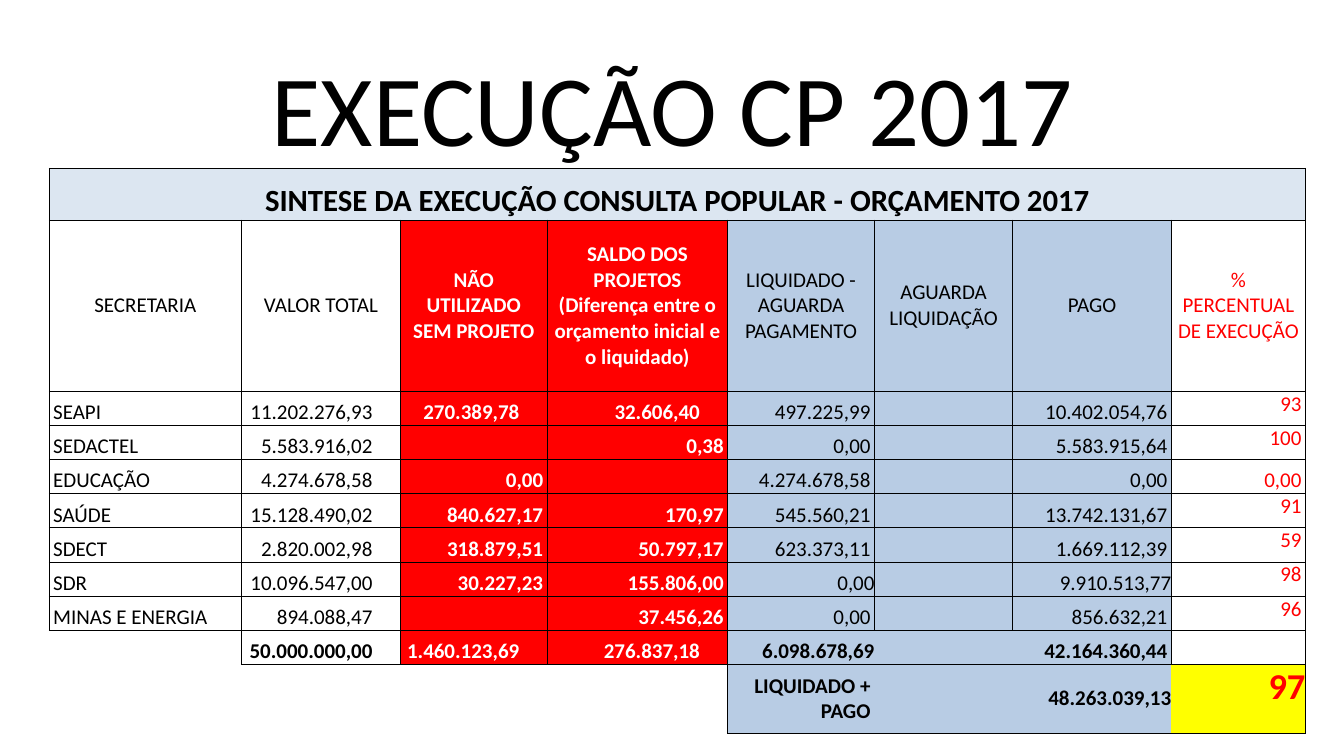
"""Build the slide on the 2017 budget execution."""
from dataclasses import dataclass

from lxml.etree import SubElement
from pptx import Presentation
from pptx.dml.color import RGBColor
from pptx.enum.text import MSO_ANCHOR, PP_ALIGN
from pptx.oxml.ns import qn
from pptx.util import Cm, Pt


@dataclass(frozen=True)
class Theme:
    font: str = "Calibri"
    black: str = "000000"
    white: str = "FFFFFF"
    red: str = "FF0000"
    blue: str = "B8CCE4"
    pale: str = "DCE6F1"
    yellow: str = "FFFF00"
    title: int = 72
    band: int = 22
    body: int = 15
    result: int = 26
    line: float = 0.5
    pad: float = 0.1
    wide: float = 0.7


WIDTHS = (4.85, 4, 3.7, 4.55, 3.7, 3.48, 4, 3.38)
HEIGHTS = (1.3, 4.32, *[0.86] * 8, 1.74)
SUM, LAST = 9, 10
BAND = "SINTESE DA EXECUÇÃO CONSULTA POPULAR - ORÇAMENTO 2017"
ROWS = (
    (BAND, "", "", "", "", "", "", ""),
    ("SECRETARIA", "VALOR TOTAL", "NÃO\nUTILIZADO\nSEM PROJETO",
     "SALDO DOS PROJETOS\n(Diferença entre o orçamento inicial e o liquidado)",
     "LIQUIDADO - AGUARDA PAGAMENTO", "AGUARDA\nLIQUIDAÇÃO", "PAGO",
     "% PERCENTUAL DE EXECUÇÃO"),
    ("SEAPI", "11.202.276,93", "270.389,78", "32.606,40", "497.225,99", "",
     "10.402.054,76", "93"),
    ("SEDACTEL", "5.583.916,02", "", "0,38", "0,00", "", "5.583.915,64", "100"),
    ("EDUCAÇÃO", "4.274.678,58", "0,00", "", "4.274.678,58", "", "0,00", "0,00"),
    ("SAÚDE", "15.128.490,02", "840.627,17", "170,97", "545.560,21", "",
     "13.742.131,67", "91"),
    ("SDECT", "2.820.002,98", "318.879,51", "50.797,17", "623.373,11", "",
     "1.669.112,39", "59"),
    ("SDR", "10.096.547,00", "30.227,23", "155.806,00", "0,00", "",
     "9.910.513,77", "98"),
    ("MINAS E ENERGIA", "894.088,47", "", "37.456,26", "0,00", "",
     "856.632,21", "96"),
    ("", "50.000.000,00", "1.460.123,69", "276.837,18", "6.098.678,69", "",
     "42.164.360,44", ""),
    ("", "", "", "", "LIQUIDADO + PAGO", "", "48.263.039,13", "97"),
)
EDGES = {
    SUM: ("TR", "LRTB", "LRTB", "LRTB", "LTB", "TB", "RTB", "LRTB"),
    LAST: ("", "T", "RT", "RT", "LTB", "TB", "TB", "RTB"),
}
WIDE = {(2, 2), (2, 3), (SUM, 2), (SUM, 3)}
FLUSH = {(7, 4), (7, 6), (SUM, 4), (LAST, 6), (LAST, 7)}


class Deck:
    """Hold the theme and the current slide."""

    def __init__(self, theme):
        self.theme = theme
        self.show = Presentation()
        self.show.slide_width, self.show.slide_height = Cm(33.87), Cm(19.05)
        self.slide = self.show.slides.add_slide(self.show.slide_layouts[6])

    def label(self, frame, text, size, color, bold, align):
        """Fill a text frame with one paragraph, run by run."""
        frame.word_wrap = True
        para = frame.paragraphs[0]
        para.alignment = align
        for num, part in enumerate(text.split("\n")):
            if num:
                para.add_line_break()
            run = para.add_run()
            run.text = part
            font = run.font
            font.name, font.size, font.bold = self.theme.font, Pt(size), bold
            font.color.rgb = RGBColor.from_string(color)
        return para

    def title(self, text, left, top, width, height):
        """Add the slide title."""
        box = self.slide.shapes.add_textbox(
            Cm(left), Cm(top), Cm(width), Cm(height))
        box.text_frame.vertical_anchor = MSO_ANCHOR.MIDDLE
        look = self.theme
        para = self.label(box.text_frame, text, look.title, look.black,
                          False, PP_ALIGN.CENTER)
        para.line_spacing = 0.9

    def border(self, cell, edges):
        """Draw the named sides of a cell and clear the others."""
        props = cell._tc.get_or_add_tcPr()
        for side in "LRTB":
            line = SubElement(props, qn(f"a:ln{side}"),
                              w=str(Pt(self.theme.line)))
            if side in edges:
                fill = SubElement(line, qn("a:solidFill"))
                SubElement(fill, qn("a:srgbClr"), val=self.theme.black)
            else:
                SubElement(line, qn("a:noFill"))

    def colors(self, row, col):
        """Return the fill and text colours of a cell."""
        look = self.theme
        if row == 0:
            return look.pale, look.black
        if (row, col) == (LAST, 7):
            return look.yellow, look.red
        if col in (2, 3) and row < LAST:
            return look.red, look.white
        if 4 <= col <= 6:
            return look.blue, look.black
        return look.white, look.red if col == 7 else look.black

    def place(self, row, col):
        """Return the alignment, anchor and right margin of a cell."""
        look = self.theme
        align = PP_ALIGN.RIGHT if col else PP_ALIGN.LEFT
        anchor = MSO_ANCHOR.BOTTOM
        if row < 2:
            align = PP_ALIGN.CENTER
        if row == 1 or row == LAST:
            anchor = MSO_ANCHOR.MIDDLE
        if col == 7 and row > 1 and row != 4:
            anchor = MSO_ANCHOR.TOP
        gap = look.pad
        if row > 1 and col == 1 or (row, col) in WIDE:
            gap = look.wide
        elif (row, col) in FLUSH:
            gap = 0
        return align, anchor, gap

    def cell(self, cell, row, col, text):
        """Style and fill one table cell."""
        look = self.theme
        fill, color = self.colors(row, col)
        align, anchor, gap = self.place(row, col)
        self.border(cell, EDGES[row][col] if row in EDGES else "LRTB")
        cell.fill.solid()
        cell.fill.fore_color.rgb = RGBColor.from_string(fill)
        cell.margin_top = cell.margin_bottom = 0
        cell.margin_left, cell.margin_right = Cm(look.pad), Cm(gap)
        cell.vertical_anchor = anchor
        if text:
            size = {(0, 0): look.band, (LAST, 7): look.result}.get(
                (row, col), look.body)
            bold = row in (0, SUM, LAST) or col in (2, 3)
            self.label(cell.text_frame, text, size, color, bold, align)

    def table(self, left, top):
        """Add the table of spending by department."""
        grid = self.slide.shapes.add_table(
            len(HEIGHTS), len(WIDTHS), Cm(left), Cm(top),
            Cm(sum(WIDTHS)), Cm(sum(HEIGHTS))).table
        grid.first_row = grid.horz_banding = False
        for part, width in zip(grid.columns, WIDTHS):
            part.width = Cm(width)
        for part, height in zip(grid.rows, HEIGHTS):
            part.height = Cm(height)
        grid.cell(0, 0).merge(grid.cell(0, 7))
        grid.cell(LAST, 2).merge(grid.cell(LAST, 3))
        for row, line in enumerate(ROWS):
            for col, text in enumerate(line):
                self.cell(grid.cell(row, col), row, col, text)


def main():
    """Build and save the deck."""
    deck = Deck(Theme())
    deck.title("EXECUÇÃO CP 2017", 2.34, 1.02, 29.21, 3.68)
    deck.table(1.24, 4.24)
    deck.show.save("out.pptx")


if __name__ == "__main__":
    main()
